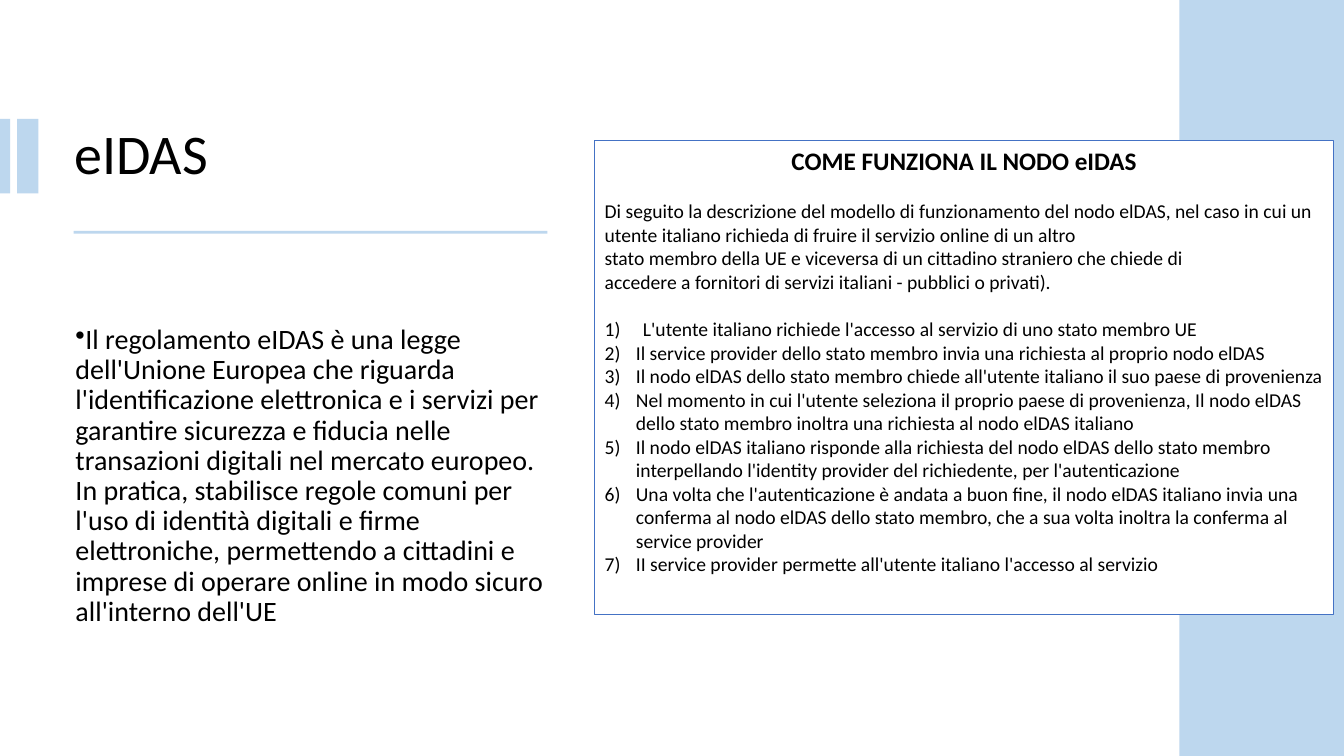
from pptx import Presentation, util as u
from pptx.dml.color import RGBColor
from pptx.enum import shapes, text
from pptx.oxml.ns import qn
from lxml import etree

COLORS = {"sky": "BDD7EE", "white": "FFFFFF", "border": "4472C4", "ink": "000000"}
WIDTH, HEIGHT = u.Inches(13.333), u.Inches(7.5)

TITLE = "eIDAS"
BODY = (
    "Il regolamento eIDAS è una legge dell'Unione Europea che riguarda "
    "l'identificazione elettronica e i servizi per garantire sicurezza e fiducia "
    "nelle transazioni digitali nel mercato europeo. In pratica, stabilisce regole "
    "comuni per l'uso di identità digitali e firme elettroniche, permettendo a "
    "cittadini e imprese di operare online in modo sicuro all'interno dell'UE"
)
HEADING = "COME FUNZIONA IL NODO eIDAS"
INTRO = [
    "Di seguito la descrizione del modello di funzionamento del nodo elDAS, nel caso "
    "in cui un utente italiano richieda di fruire il servizio online di un altro",
    "stato membro della UE e viceversa di un cittadino straniero che chiede di",
    "accedere a fornitori di servizi italiani - pubblici o privati).",
]
STEPS = [
    "L'utente italiano richiede l'accesso al servizio di uno stato membro UE",
    "Il service provider dello stato membro invia una richiesta al proprio nodo elDAS",
    "Il nodo elDAS dello stato membro chiede all'utente italiano il suo paese di provenienza",
    "Nel momento in cui l'utente seleziona il proprio paese di provenienza, Il nodo elDAS "
    "dello stato membro inoltra una richiesta al nodo elDAS italiano",
    "Il nodo elDAS italiano risponde alla richiesta del nodo elDAS dello stato membro "
    "interpellando l'identity provider del richiedente, per l'autenticazione",
    "Una volta che l'autenticazione è andata a buon fine, il nodo elDAS italiano invia una "
    "conferma al nodo elDAS dello stato membro, che a sua volta inoltra la conferma al "
    "service provider",
    "II service provider permette all'utente italiano l'accesso al servizio",
]

# Percentages of slide width and height: left, top, width, height
DECOR = [
    (0, 15.73, 0.75, 9.87),
    (1.28, 15.73, 1.58, 9.87),
    (5.48, 30.53, 35.25, 0.4),
    (87.75, 0, 12.25, 100),
]
TITLE_AREA = (4.8, 12.53, 37.43, 16.4)
BODY_AREA = (4.88, 34, 37.43, 58)
PANEL_AREA = (44.25, 18.53, 54.98, 62.8)

LEFT_FORMAT = {"line_spacing": 0.9, "space_after": u.Pt(6)}
HEADING_FORMAT = {"alignment": text.PP_ALIGN.CENTER, "space_after": u.Pt(17)}
PANEL_FORMAT = {"alignment": text.PP_ALIGN.LEFT}
SECTION_END = {**PANEL_FORMAT, "space_after": u.Pt(17)}
FIRST_INDENT, STEP_INDENT, BODY_HANG = u.Inches(0.38), u.Inches(0.31), u.Inches(0.25)


def place(area):
    return [int(share * side / 100) for share, side in zip(area, (WIDTH, HEIGHT) * 2)]


def color(name):
    return RGBColor.from_string(COLORS[name])


def add_rectangle(page, area, fill, line=None):
    box = page.shapes.add_shape(shapes.MSO_SHAPE.RECTANGLE, *place(area))
    box.shadow.inherit = False
    box.fill.solid()
    box.fill.fore_color.rgb = color(fill)
    if line:
        box.line.color.rgb = color(line)
        box.line.width = u.Pt(0.75)
    else:
        box.line.fill.background()
    return box


def write(box, lines, anchor):
    frame = box.text_frame
    frame.word_wrap = True
    frame.vertical_anchor = anchor
    for index, (words, size, bold, layout, bullet) in enumerate(lines):
        para = frame.add_paragraph() if index else frame.paragraphs[0]
        for name, value in layout.items():
            setattr(para, name, value)
        span = para.add_run()
        span.text = words
        font = {"name": "Calibri", "size": u.Pt(size), "bold": bold}
        for name, value in font.items():
            setattr(span.font, name, value)
        span.font.color.rgb = color("ink")
        if bullet:
            tag, attributes, margin, hang = bullet
            properties = para._p.get_or_add_pPr()
            properties.set("marL", str(margin))
            properties.set("indent", str(-hang))
            etree.SubElement(properties, qn(tag), attributes)


def numbered(indent):
    return "a:buAutoNum", {"type": "arabicParenR"}, indent, indent


def main():
    deck = Presentation()
    deck.slide_width, deck.slide_height = WIDTH, HEIGHT
    page = deck.slides.add_slide(deck.slide_layouts[6])

    for area in DECOR:
        add_rectangle(page, area, "sky")

    dot = ("a:buChar", {"char": "•"}, 0, BODY_HANG)
    for area, words, size, bullet in (
        (TITLE_AREA, TITLE, 40, None),
        (BODY_AREA, BODY, 20, dot),
    ):
        box = page.shapes.add_textbox(*place(area))
        write(box, [(words, size, False, LEFT_FORMAT, bullet)], text.MSO_ANCHOR.MIDDLE)

    lines = [(HEADING, 18, True, HEADING_FORMAT, None)]
    for words in INTRO:
        layout = SECTION_END if words == INTRO[-1] else PANEL_FORMAT
        lines.append((words, 14, False, layout, None))
    for index, words in enumerate(STEPS):
        indent = STEP_INDENT if index else FIRST_INDENT
        lines.append((words, 14, False, PANEL_FORMAT, numbered(indent)))
    panel = add_rectangle(page, PANEL_AREA, "white", "border")
    write(panel, lines, text.MSO_ANCHOR.TOP)

    deck.save("out.pptx")


if __name__ == "__main__":
    main()
